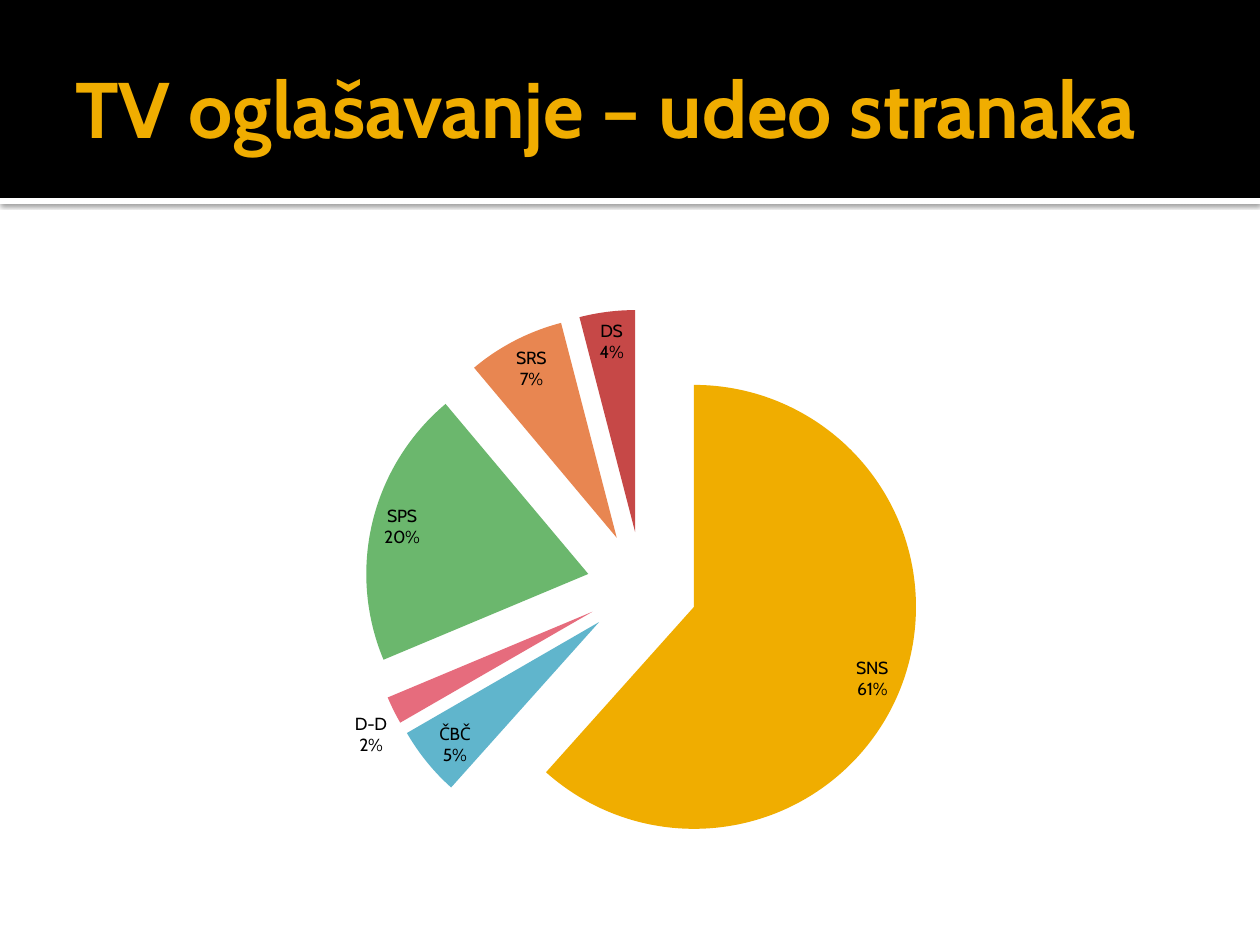
from lxml import etree
from pptx import Presentation
from pptx.chart.data import CategoryChartData
from pptx.dml.color import RGBColor
from pptx.enum.chart import XL_CHART_TYPE, XL_LABEL_POSITION
from pptx.enum.shapes import MSO_SHAPE
from pptx.enum.text import MSO_ANCHOR
from pptx.oxml import parse_xml
from pptx.oxml.ns import qn
from pptx.util import Pt

PIE = XL_CHART_TYPE.PIE
BEST_FIT = XL_LABEL_POSITION.BEST_FIT
RECTANGLE = MSO_SHAPE.RECTANGLE
MIDDLE = MSO_ANCHOR.MIDDLE

BLACK = RGBColor(0x00, 0x00, 0x00)
WHITE = RGBColor(0xFF, 0xFF, 0xFF)
GOLD = RGBColor(0xF0, 0xAD, 0x00)
BLUE = RGBColor(0x60, 0xB5, 0xCC)
PINK = RGBColor(0xE6, 0x6C, 0x7D)
GREEN = RGBColor(0x6B, 0xB7, 0x6D)
ORANGE = RGBColor(0xE8, 0x86, 0x51)
RED = RGBColor(0xC6, 0x48, 0x47)
FONT = "Cabin"

# Content
TITLE = "TV oglašavanje – udeo stranaka"
PARTIES = [
    ("SNS", 61, GOLD),
    ("ČBČ", 5, BLUE),
    ("D-D", 2, PINK),
    ("SPS", 20, GREEN),
    ("SRS", 7, ORANGE),
    ("DS", 4, RED),
]
EXPLOSION = 25

# Layout in px, 126 to the inch
EMU_PER_PX = 914400 / 126
SLIDE_W, SLIDE_H = 1260, 945
BAND_H, STRIPE_H = 198, 6
MARGIN = 63
CONTENT_W = SLIDE_W - 2 * MARGIN

STRIPE_SHADOW = (
    '<a:effectLst xmlns:a="http://schemas.openxmlformats.org/drawingml/2006/main">'
    '<a:outerShdw blurRad="31750" dist="10160" dir="5400000" rotWithShape="0">'
    '<a:srgbClr val="000000"><a:alpha val="60000"/></a:srgbClr>'
    "</a:outerShdw></a:effectLst>"
)


def px(*lengths):
    return [round(length * EMU_PER_PX) for length in lengths]


def add_band(slide, top, height, color):
    band = slide.shapes.add_shape(RECTANGLE, *px(0, top, SLIDE_W, height))
    band.shadow.inherit = False
    band.fill.solid()
    band.fill.fore_color.rgb = color
    band.line.fill.background()
    return band


def add_title(slide):
    title = slide.shapes.add_textbox(*px(MARGIN, 21, CONTENT_W, 173))
    frame = title.text_frame
    frame.word_wrap = True
    frame.vertical_anchor = MIDDLE
    frame.margin_left, frame.margin_right = Pt(7.2), Pt(3.6)
    frame.text = TITLE
    font = frame.paragraphs[0].runs[0].font
    font.name, font.size, font.bold = FONT, Pt(45), True
    font.color.rgb = GOLD


def add_share_chart(slide):
    shares = CategoryChartData()
    shares.categories = [party for party, _, _ in PARTIES]
    shares.add_series("Series 1", [share for _, share, _ in PARTIES])
    chart = slide.shapes.add_chart(PIE, *px(MARGIN, 244, CONTENT_W, 638), shares).chart
    chart.has_legend = False
    chart.has_title = False
    chart.font.name, chart.font.size = FONT, Pt(10)
    chart.font.color.rgb = BLACK
    chart.plots[0].vary_by_categories = True

    # Slices, all pulled out equally
    series = chart.plots[0].series[0]
    for index, (_, _, color) in enumerate(PARTIES):
        fill = series.points[index].format.fill
        fill.solid()
        fill.fore_color.rgb = color
    explosion = etree.Element(qn("c:explosion"), val=str(EXPLOSION))
    series._element.find(qn("c:dPt")).addprevious(explosion)
    for slice_xml in series._element.findall(qn("c:dPt")):
        slice_xml.find(qn("c:spPr")).addprevious(
            etree.Element(qn("c:explosion"), val=str(EXPLOSION)))

    # Labels: party above its share
    labels = series.data_labels
    labels.show_category_name = True
    labels.show_value = True
    labels.number_format = '0"%"'
    labels.number_format_is_linked = False
    labels.position = BEST_FIT
    separator = etree.Element(qn("c:separator"))
    separator.text = "\n"
    labels._element.find(qn("c:showBubbleSize")).addnext(separator)


def main():
    prs = Presentation()
    prs.slide_width, prs.slide_height = px(SLIDE_W, SLIDE_H)
    slide = prs.slides.add_slide(prs.slide_layouts[6])

    # Header: white stripe with a shadow under the black band
    stripe = add_band(slide, BAND_H, STRIPE_H, WHITE)
    properties = stripe._element.spPr
    properties.replace(properties.find(qn("a:effectLst")), parse_xml(STRIPE_SHADOW))
    add_band(slide, 0, BAND_H, BLACK)
    add_title(slide)
    add_share_chart(slide)
    prs.save("out.pptx")


if __name__ == "__main__":
    main()
